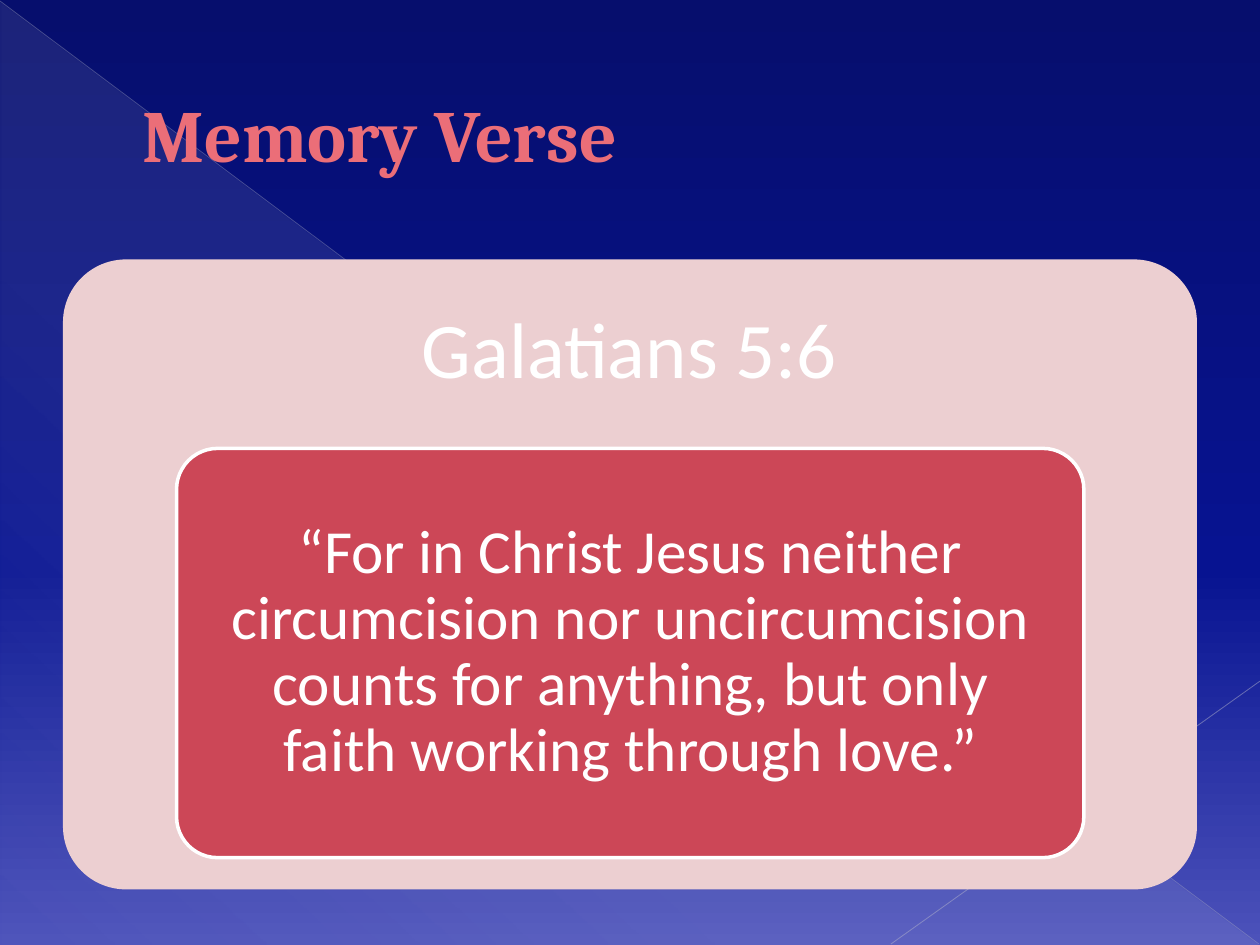
from lxml.etree import SubElement
from pptx import Presentation
from pptx.dml.color import RGBColor
from pptx.enum.shapes import MSO_CONNECTOR, MSO_SHAPE
from pptx.enum.text import MSO_ANCHOR, PP_ALIGN
from pptx.oxml import parse_xml
from pptx.oxml.ns import nsdecls, qn
from pptx.util import Cm, Pt

NAVY = RGBColor(0x06, 0x0E, 0x6D)
BLUE = RGBColor(0x07, 0x13, 0x91)
VIOLET = RGBColor(0x4C, 0x52, 0xBA)
WHITE = RGBColor(0xFF, 0xFF, 0xFF)
GREY = RGBColor(0xB1, 0xB2, 0xC7)
LIGHT_GREY = RGBColor(0xBA, 0xBA, 0xCD)
PINK = RGBColor(0xEB, 0x6E, 0x78)
MAROON = RGBColor(0x8D, 0x31, 0x3C)
PALE_PINK = RGBColor(0xEC, 0xCF, 0xD1)
RED = RGBColor(0xCC, 0x47, 0x57)


def set_gradient(solid_fill, angle, stops):
    """Replace a solid fill by a linear gradient of (position, colour, opacity) stops."""
    gs = "".join(
        f'<a:gs pos="{pos * 1000}"><a:srgbClr val="{color}">'
        f'<a:alpha val="{alpha * 1000}"/></a:srgbClr></a:gs>'
        for pos, color, alpha in stops)
    grad = parse_xml(f'<a:gradFill {nsdecls("a")} rotWithShape="1"><a:gsLst>{gs}</a:gsLst>'
                     f'<a:lin ang="{angle * 60000}" scaled="0"/></a:gradFill>')
    solid_fill.getparent().replace(solid_fill, grad)


def add_text(text, box, *, size, font, color=WHITE, bold=False, align=PP_ALIGN.CENTER,
             inset=(0.25, 0.13), spacing=0.9):
    tf = s.shapes.add_textbox(*map(Cm, box)).text_frame
    tf.word_wrap = True
    tf.vertical_anchor = MSO_ANCHOR.MIDDLE
    tf.margin_left = tf.margin_right = Cm(inset[0])
    tf.margin_top = tf.margin_bottom = Cm(inset[1])
    p = tf.paragraphs[0]
    p.alignment = align
    p.line_spacing = spacing
    r = p.add_run()
    r.text = text
    r.font.size = Pt(size)
    r.font.name = font
    r.font.bold = bold
    r.font.color.rgb = color
    return r


prs = Presentation()
prs.slide_width, prs.slide_height = Cm(25.4), Cm(19.05)
s = prs.slides.add_slide(prs.slide_layouts[6])

# Background gradient
s.background.fill.solid()
set_gradient(s.element.find(".//" + qn("a:solidFill")), 90,
             [(0, NAVY, 100), (60, BLUE, 100), (100, VIOLET, 100)])

# Translucent triangle
sp = s.shapes.add_shape(MSO_SHAPE.RIGHT_TRIANGLE, Cm(0.02), Cm(0.04), Cm(25.36), Cm(19))
sp.shadow.inherit = False
sp.line.fill.background()
sp.fill.solid()
set_gradient(sp.element.spPr.find(qn("a:solidFill")), 133,
             [(0, WHITE, 10), (70, WHITE, 8), (100, WHITE, 1)])

# Thin diagonal lines
for ends, color, width, alpha in [
    ((0, 0.02, 25.38, 19.03), GREY, 0.39, 35),
    ((25.4, 13.73, 17.96, 19.03), LIGHT_GREY, 0.47, 45),
]:
    line = s.shapes.add_connector(MSO_CONNECTOR.STRAIGHT, *map(Cm, ends))
    line.line.color.rgb = color
    line.line.width = Pt(width)
    spPr = line.element.spPr
    SubElement(spPr.find(".//" + qn("a:srgbClr")), qn("a:alpha"), val=str(alpha * 1000))
    SubElement(spPr, qn("a:effectLst"))

# Title with a thin letter outline
r = add_text("Memory Verse", (2.62, 0.74, 21.51, 3.89), size=42, font="Cambria",
             color=PINK, bold=True, align=PP_ALIGN.LEFT, spacing=1.0)
r.font._element.insert(0, parse_xml(
    f'<a:ln {nsdecls("a")} w="6350"><a:solidFill><a:srgbClr val="{MAROON}"/></a:solidFill></a:ln>'))

# Outer and inner cards
for box, fill, outlined in [
    ((1.27, 5.23, 22.86, 12.7), PALE_PINK, False),
    ((3.56, 9.04, 18.29, 8.25), RED, True),
]:
    sp = s.shapes.add_shape(MSO_SHAPE.ROUNDED_RECTANGLE, *map(Cm, box))
    sp.adjustments[0] = 0.1
    sp.shadow.inherit = False
    sp.fill.solid()
    sp.fill.fore_color.rgb = fill
    if outlined:
        sp.line.color.rgb = WHITE
        sp.line.width = Pt(2)
    else:
        sp.line.fill.background()

# Reference and verse
add_text("Galatians 5:6", (1.37, 5.33, 22.63, 3.58), size=45, font="Calibri",
         inset=(2.39, 0.89))
add_text("“For in Christ Jesus neither circumcision nor uncircumcision counts for anything, "
         "but only faith working through love.”",
         (3.81, 9.27, 17.81, 7.77), size=35, font="Calibri", inset=(0.69, 0.69))

prs.save("out.pptx")
